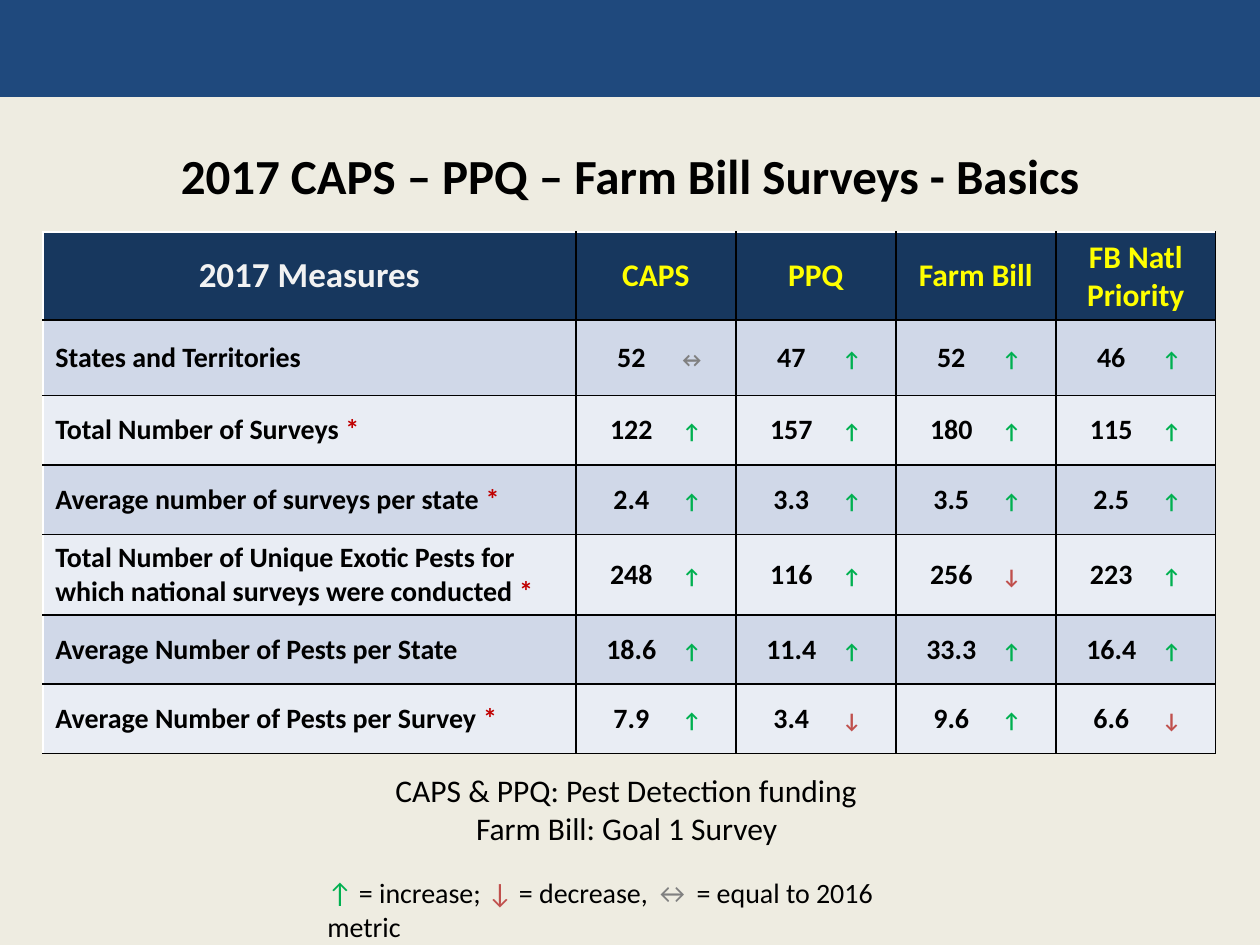
from lxml import etree
from pptx import Presentation
from pptx.dml.color import RGBColor
from pptx.enum.shapes import MSO_SHAPE
from pptx.enum.text import MSO_ANCHOR, PP_ALIGN
from pptx.oxml.ns import qn
from pptx.util import Inches, Pt

CENTER, LEFT = PP_ALIGN.CENTER, PP_ALIGN.LEFT
MIDDLE, TOP = MSO_ANCHOR.MIDDLE, MSO_ANCHOR.TOP
RECTANGLE = MSO_SHAPE.RECTANGLE

FONT = "Calibri"
BLACK = RGBColor(0x00, 0x00, 0x00)
WHITE = RGBColor(0xFF, 0xFF, 0xFF)
CREAM = RGBColor(0xEE, 0xEC, 0xE1)
BAND_BLUE = RGBColor(0x1F, 0x49, 0x7D)
HEADER_BLUE = RGBColor(0x17, 0x37, 0x5E)
HEADER_GREY = RGBColor(0xF2, 0xF2, 0xF2)
YELLOW = RGBColor(0xFF, 0xFF, 0x00)
ROW_DARK = RGBColor(0xD0, 0xD8, 0xE8)
ROW_LIGHT = RGBColor(0xE9, 0xED, 0xF4)
STAR_RED = RGBColor(0xC0, 0x00, 0x00)

TREND_COLORS = {
    "↑": RGBColor(0x00, 0xB0, 0x50),
    "↓": RGBColor(0xC0, 0x50, 0x4D),
    "↔": RGBColor(0x80, 0x80, 0x80),
}

COLUMN_WIDTHS = [4.23] + [1.27] * 4
ROW_HEIGHTS = [0.7, 0.6, 0.55, 0.55, 0.64, 0.55, 0.55]
VALUE_STOP, TREND_STOP = 0.44, 0.92  # tab positions within a value cell

HEADINGS = ["2017 Measures", "CAPS", "PPQ", "Farm Bill", "FB Natl Priority"]
# Measure, starred, values by program, trend of each value
MEASURES = [
    ("States and Territories", False, ["52", "47", "52", "46"], "↔↑↑↑"),
    ("Total Number of Surveys", True, ["122", "157", "180", "115"], "↑↑↑↑"),
    ("Average number of surveys per state", True,
     ["2.4", "3.3", "3.5", "2.5"], "↑↑↑↑"),
    ("Total Number of Unique Exotic Pests for which national surveys "
     "were conducted", True, ["248", "116", "256", "223"], "↑↑↓↑"),
    ("Average Number of Pests per State", False,
     ["18.6", "11.4", "33.3", "16.4"], "↑↑↑↑"),
    ("Average Number of Pests per Survey", True,
     ["7.9", "3.4", "9.6", "6.6"], "↑↓↑↓"),
]
LEGEND = [("↑", " = increase; "), ("↓", " = decrease, "),
          ("↔", " = equal to 2016 metric")]


def add_run(paragraph, text, size, color=BLACK, bold=False):
    run = paragraph.add_run()
    run.text = text
    run.font.name = FONT
    run.font.size = Pt(size)
    run.font.bold = bold
    run.font.color.rgb = color
    return run


def add_text_box(slide, left, top, width, height, align=LEFT, anchor=TOP,
                 wrap=True):
    """Add an empty text box and return its first paragraph."""
    frame = slide.shapes.add_textbox(Inches(left), Inches(top), Inches(width),
                                     Inches(height)).text_frame
    frame.word_wrap = wrap
    frame.vertical_anchor = anchor
    paragraph = frame.paragraphs[0]
    paragraph.alignment = align
    return paragraph


def add_text_shadow(run):
    effects = etree.Element(qn("a:effectLst"))
    shadow = etree.SubElement(effects, qn("a:outerShdw"), blurRad="38100",
                              dist="38100", dir="2700000", algn="tl")
    color = etree.SubElement(shadow, qn("a:srgbClr"), val="000000")
    etree.SubElement(color, qn("a:alpha"), val="43000")
    run.font._element.find(qn("a:solidFill")).addnext(effects)


def add_tab_stops(paragraph, stops):
    tabs = etree.SubElement(paragraph._p.get_or_add_pPr(), qn("a:tabLst"))
    for stop in stops:
        etree.SubElement(tabs, qn("a:tab"), pos=str(Inches(stop)), algn="ctr")


def set_borders(cell, left, top):
    """Draw 1 pt edges; right and bottom edges are always black."""
    properties = cell._tc.get_or_add_tcPr()
    edges = [("a:lnL", left), ("a:lnR", BLACK), ("a:lnT", top),
             ("a:lnB", BLACK)]
    for position, (tag, color) in enumerate(edges):
        line = etree.Element(qn(tag), w=str(Pt(1)))
        fill = etree.SubElement(line, qn("a:solidFill"))
        etree.SubElement(fill, qn("a:srgbClr"), val=str(color))
        properties.insert(position, line)


def style_cell(cell, row, column):
    """Fill and frame a cell, and return its first paragraph."""
    cell.fill.solid()
    if row == 0:
        cell.fill.fore_color.rgb = HEADER_BLUE
    else:
        cell.fill.fore_color.rgb = ROW_DARK if row % 2 else ROW_LIGHT
    set_borders(cell, left=BLACK if column else WHITE,
                top=BLACK if row else WHITE)
    cell.vertical_anchor = MIDDLE
    return cell.text_frame.paragraphs[0]


def fill_value_cell(cell, row, column, value, trend):
    paragraph = style_cell(cell, row, column)
    cell.margin_left = cell.margin_right = 0
    cell.margin_top = cell.margin_bottom = 0
    paragraph.alignment = LEFT
    add_tab_stops(paragraph, [VALUE_STOP, TREND_STOP])
    add_run(paragraph, f"\t{value}\t", 16, bold=True)
    add_run(paragraph, trend, 12, TREND_COLORS[trend], bold=True)


def add_measures_table(slide):
    table = slide.shapes.add_table(
        len(ROW_HEIGHTS), len(COLUMN_WIDTHS), Inches(0.34), Inches(1.84),
        Inches(sum(COLUMN_WIDTHS)), Inches(sum(ROW_HEIGHTS))).table
    for column, width in zip(table.columns, COLUMN_WIDTHS):
        column.width = Inches(width)
    for row, height in zip(table.rows, ROW_HEIGHTS):
        row.height = Inches(height)

    # Header row
    for column, heading in enumerate(HEADINGS):
        paragraph = style_cell(table.cell(0, column), 0, column)
        paragraph.alignment = CENTER
        size, color = (18, YELLOW) if column else (20, HEADER_GREY)
        add_run(paragraph, heading, size, color, bold=True)

    # One row per measure
    for row, (measure, starred, values, trends) in enumerate(MEASURES, 1):
        paragraph = style_cell(table.cell(row, 0), row, 0)
        add_run(paragraph, measure + (" " if starred else ""), 16, bold=True)
        if starred:
            add_run(paragraph, "*", 16, STAR_RED, bold=True)
        for column, (value, trend) in enumerate(zip(values, trends), 1):
            fill_value_cell(table.cell(row, column), row, column, value, trend)


def add_top_band(slide):
    band = slide.shapes.add_shape(RECTANGLE, 0, 0, Inches(10), Inches(0.77))
    band.shadow.inherit = False
    band.fill.solid()
    band.fill.fore_color.rgb = BAND_BLUE
    band.line.fill.background()


def main():
    presentation = Presentation()
    presentation.slide_width = Inches(10)
    presentation.slide_height = Inches(7.5)
    slide = presentation.slides.add_slide(presentation.slide_layouts[6])
    slide.background.fill.solid()
    slide.background.fill.fore_color.rgb = CREAM

    # Band and title
    add_top_band(slide)
    title = add_text_box(slide, 0.5, 1, 9, 0.78, CENTER, MIDDLE)
    add_text_shadow(add_run(
        title, "2017 CAPS – PPQ – Farm Bill Surveys - Basics", 28, bold=True))

    add_measures_table(slide)

    # Funding notes
    pest_note = add_text_box(slide, 3.04, 6.07, 3.91, 0.4, wrap=False)
    add_run(pest_note, "CAPS & PPQ: Pest Detection funding", 18)
    goal_note = add_text_box(slide, 3.68, 6.37, 2.62, 0.4, wrap=False)
    add_run(goal_note, "Farm Bill: Goal 1 Survey", 18)

    # Trend legend
    legend = add_text_box(slide, 2.5, 6.9, 5, 0.37)
    for trend, meaning in LEGEND:
        add_run(legend, trend, 16, TREND_COLORS[trend])
        add_run(legend, meaning, 16)

    presentation.save("out.pptx")


if __name__ == "__main__":
    main()
